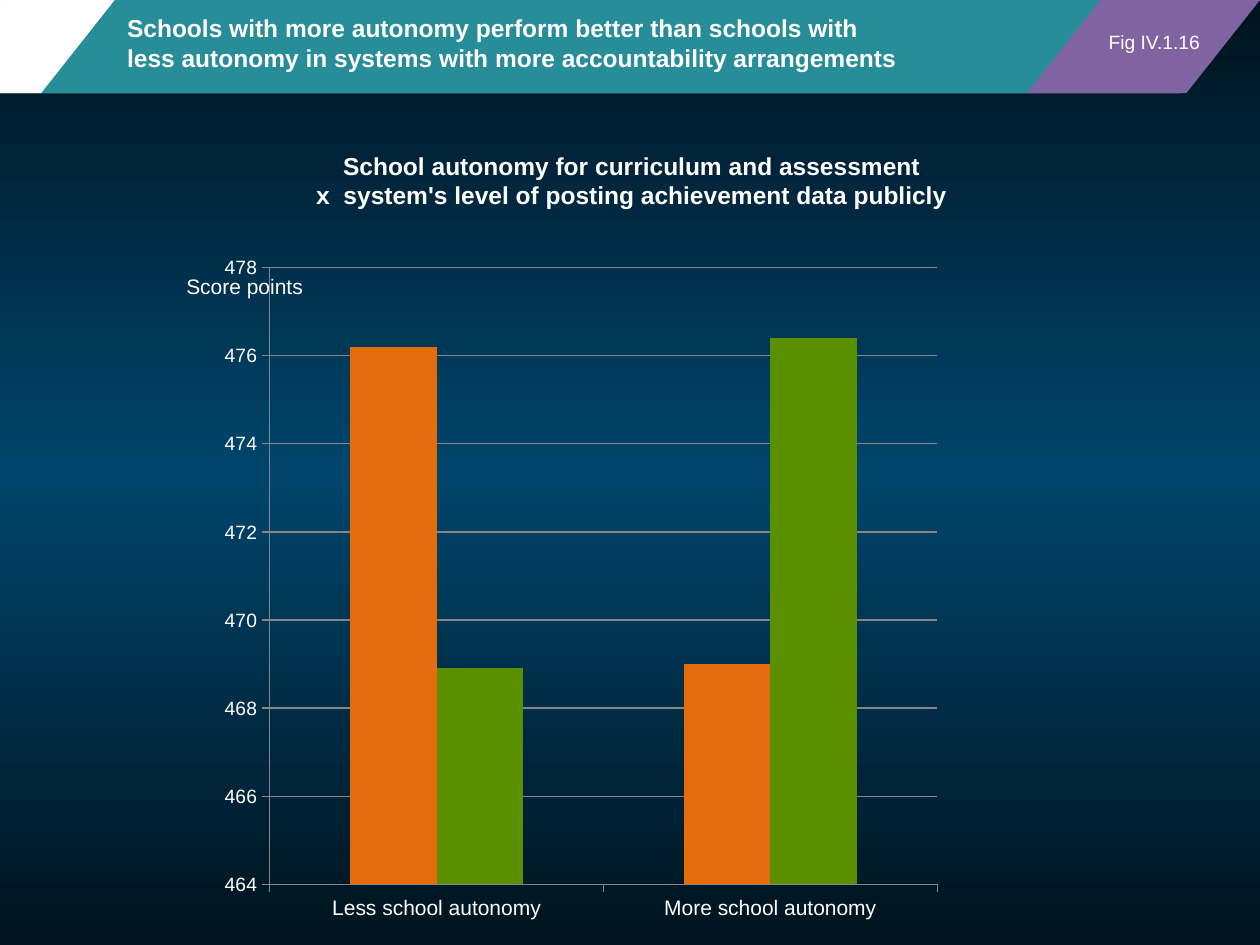
from copy import deepcopy
from dataclasses import dataclass

from lxml.etree import SubElement
from pptx import Presentation
from pptx.chart.data import CategoryChartData
from pptx.dml.color import RGBColor
from pptx.enum.chart import XL_CHART_TYPE, XL_TICK_MARK
from pptx.enum.shapes import MSO_SHAPE
from pptx.enum.text import MSO_ANCHOR, PP_ALIGN
from pptx.oxml.ns import qn
from pptx.util import Inches, Pt

COLS, ROWS = 10, 7.5
CELL = Inches(1)
BAND_ROWS = 0.74
BAND_SLANT = 0.79


@dataclass(frozen=True)
class Theme:
    font: str = "Arial"
    edge: str = "00131E"
    glow: str = "00456C"
    white: str = "FFFFFF"
    teal: str = "278D99"
    purple: str = "8064A2"
    orange: str = "E46C0A"
    green: str = "5A9000"
    grid: str = "868686"
    heading: int = 14
    label: int = 12
    small: int = 11


@dataclass(frozen=True)
class Box:
    """Place on the grid, in columns and rows."""
    col: float
    row: float
    cols: float
    rows: float

    def emu(self) -> list[int]:
        return [int(n * CELL) for n in (self.col, self.row, self.cols, self.rows)]


@dataclass(frozen=True)
class Band:
    col: float
    cols: float
    color: str


@dataclass(frozen=True)
class Label:
    box: Box
    lines: tuple[str, ...]
    size: int
    bold: bool = False
    align: PP_ALIGN = PP_ALIGN.LEFT
    anchor: MSO_ANCHOR = MSO_ANCHOR.TOP


T = Theme()

HEADER_BANDS = (
    Band(-0.2, 10.16, T.white),
    Band(-0.59, 9.37, T.teal),
    Band(-0.58, 1.49, T.white),
)
FIGURE_BAND = Band(8.15, 1.85, T.purple)

TITLE = Label(
    Box(0.91, 0, 7.32, 0.68),
    ("Schools with more autonomy perform better than schools with",
     "less autonomy in systems with more accountability arrangements"),
    T.heading, bold=True, anchor=MSO_ANCHOR.MIDDLE)
CHART_LABELS = (
    Label(Box(1.38, 2.12, 1.65, 0.3), ("Score points",), T.label),
    Label(Box(0.28, 1.15, 9.47, 0.57),
          ("School autonomy for curriculum and assessment",
           "x  system's level of posting achievement data publicly"),
          T.heading, bold=True, align=PP_ALIGN.CENTER),
)
FIGURE_LABEL = Label(Box(8.7, 0.19, 1.1, 0.41), ("Fig IV.1.16",), T.small)

CHART_BOX = Box(1.14, 1.87, 8.86, 5.64)
PLOT_SHARES = {"x": 0.113, "y": 0.045, "w": 0.598, "h": 0.868}
CATEGORIES = ("Less school autonomy", "More school autonomy")
SERIES = (
    ("Series 1", (476.2, 469.0), T.orange),
    ("Series 2", (468.9, 476.4), T.green),
)


def rgb(color: str) -> RGBColor:
    return RGBColor.from_string(color)


def set_format(target, **values) -> None:
    for name, value in values.items():
        setattr(target, name, value)


def set_font(font, size: int, bold: bool = False) -> None:
    set_format(font, name=T.font, size=Pt(size), bold=bold)
    font.color.rgb = rgb(T.white)


def paint_background(s) -> None:
    fill = s.background.fill
    fill.gradient()
    fill.gradient_angle = 270
    for stop, color, position in zip(fill.gradient_stops, (T.edge, T.glow), (0, 0.5)):
        stop.color.rgb = rgb(color)
        stop.position = position
    stops = s.element.find(f".//{qn('a:gsLst')}")
    last = deepcopy(stops[0])
    last.set("pos", "100000")
    stops.append(last)


def add_band(s, band: Band) -> None:
    box = Box(band.col, 0, band.cols, BAND_ROWS)
    sp = s.shapes.add_shape(MSO_SHAPE.PARALLELOGRAM, *box.emu())
    sp.adjustments[0] = BAND_SLANT
    sp.shadow.inherit = False
    sp.fill.solid()
    sp.fill.fore_color.rgb = rgb(band.color)
    sp.line.fill.background()


def add_label(s, label: Label) -> None:
    tf = s.shapes.add_textbox(*label.box.emu()).text_frame
    set_format(tf, word_wrap=True, vertical_anchor=label.anchor)
    for i, line in enumerate(label.lines):
        p = tf.add_paragraph() if i else tf.paragraphs[0]
        p.alignment = label.align
        r = p.add_run()
        r.text = line
        set_font(r.font, label.size, label.bold)


def fix_plot_area(chart) -> None:
    """Pin the inner plot area to its shares of the chart."""
    area = chart.element.find(f".//{qn('c:plotArea')}")
    for old in area.findall(qn("c:layout")):
        area.remove(old)
    layout = SubElement(area, qn("c:layout"))
    area.insert(0, layout)
    manual = SubElement(layout, qn("c:manualLayout"))
    settings = {"layoutTarget": "inner", "xMode": "edge", "yMode": "edge", **PLOT_SHARES}
    for tag, value in settings.items():
        SubElement(manual, qn(f"c:{tag}")).set("val", str(value))


def add_score_chart(s) -> None:
    data = CategoryChartData(number_format="0")
    data.categories = CATEGORIES
    for name, values, _ in SERIES:
        data.add_series(name, values)
    chart = s.shapes.add_chart(
        XL_CHART_TYPE.COLUMN_CLUSTERED, *CHART_BOX.emu(), data).chart
    set_format(chart, has_title=False, has_legend=False)
    set_font(chart.font, T.label)
    fix_plot_area(chart)

    plot = chart.plots[0]
    set_format(plot, gap_width=186, overlap=0, vary_by_categories=False)
    for series, (_, _, color) in zip(plot.series, SERIES):
        series.format.fill.solid()
        series.format.fill.fore_color.rgb = rgb(color)

    scores = chart.value_axis
    set_format(scores, minimum_scale=464, maximum_scale=478, major_unit=2,
               has_major_gridlines=True)
    for axis, size in ((chart.category_axis, T.label), (scores, T.small)):
        set_format(axis, major_tick_mark=XL_TICK_MARK.OUTSIDE,
                   minor_tick_mark=XL_TICK_MARK.NONE)
        set_font(axis.tick_labels.font, size)
    for part in (chart.category_axis, scores, scores.major_gridlines):
        part.format.line.color.rgb = rgb(T.grid)
        part.format.line.width = Pt(0.75)


def main() -> None:
    prs = Presentation()
    set_format(prs, slide_width=int(COLS * CELL), slide_height=int(ROWS * CELL))
    s = prs.slides.add_slide(prs.slide_layouts[6])
    paint_background(s)
    for band in HEADER_BANDS:
        add_band(s, band)
    add_label(s, TITLE)
    add_score_chart(s)
    for label in CHART_LABELS:
        add_label(s, label)
    add_band(s, FIGURE_BAND)
    add_label(s, FIGURE_LABEL)
    prs.save("out.pptx")


if __name__ == "__main__":
    main()
